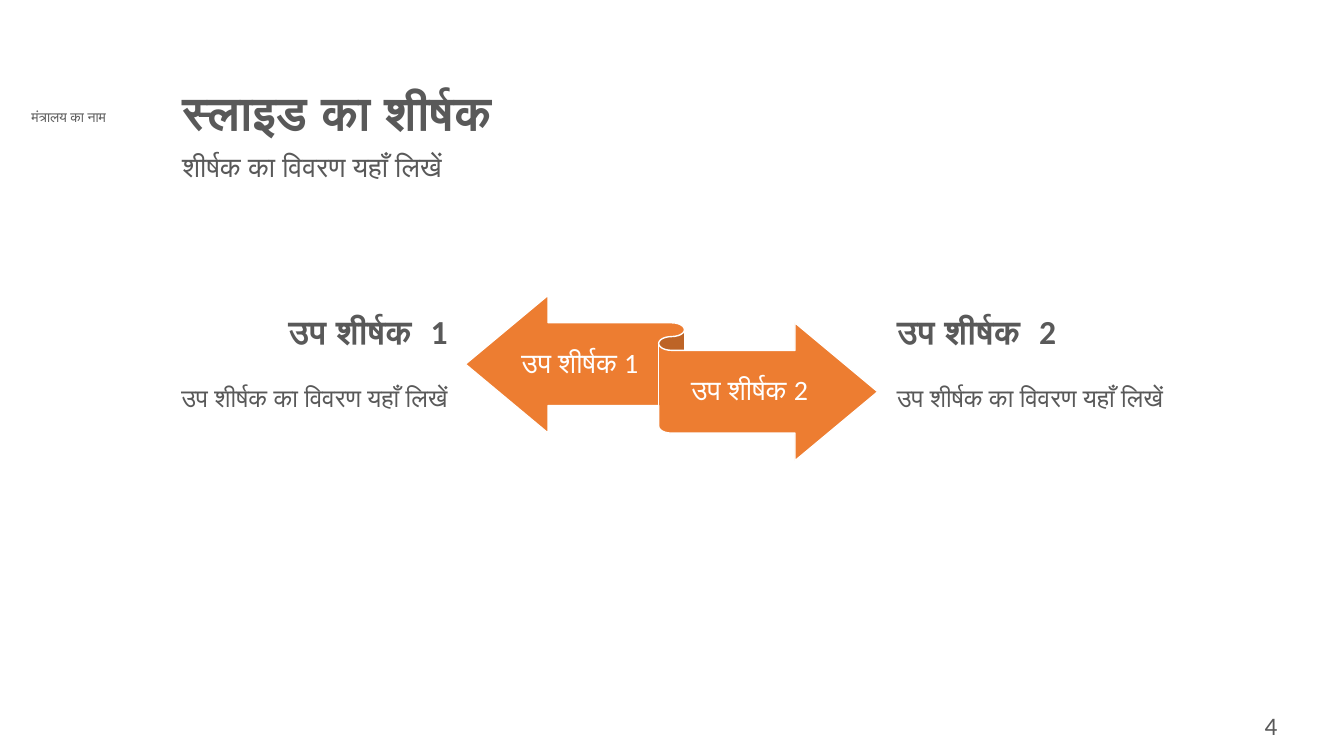
import pptx
import pptx.util
import pptx.dml.color
import pptx.enum.shapes
import pptx.enum.text

Cm = pptx.util.Cm
Pt = pptx.util.Pt
ALIGN = pptx.enum.text.PP_ALIGN
ANCHOR = pptx.enum.text.MSO_ANCHOR
GREY = pptx.dml.color.RGBColor(0x59, 0x59, 0x59)
ORANGE = pptx.dml.color.RGBColor(0xED, 0x7D, 0x31)
WHITE = pptx.dml.color.RGBColor(0xFF, 0xFF, 0xFF)


def add_box(s, left, top, width, height):
    sp = s.shapes.add_textbox(Cm(left), Cm(top), Cm(width), Cm(height))
    sp.text_frame.word_wrap = True
    return sp.text_frame


def write(p, text, size, color=GREY, bold=False, align=ALIGN.LEFT, font="Calibri"):
    p.alignment = align
    r = p.add_run()
    r.text = text
    r.font.name = font
    r.font.size = Pt(size)
    r.font.bold = bold
    r.font.color.rgb = color


prs = pptx.Presentation()
prs.slide_width = Cm(33.87)
prs.slide_height = Cm(19.05)
s = prs.slides.add_slide(prs.slide_layouts[5])

title = s.shapes.title
title.left, title.top, title.width, title.height = Cm(4.34), Cm(2.13), Cm(24.41), Cm(1.4)
tf = title.text_frame
tf.word_wrap = True
tf.auto_size = pptx.enum.text.MSO_AUTO_SIZE.NONE
tf.vertical_anchor = ANCHOR.TOP
tf.paragraphs[0].line_spacing = 0.9
write(tf.paragraphs[0], "स्लाइड का शीर्षक", 34, bold=True)

tf = add_box(s, 4.34, 3.73, 24.41, 1.6)
tf.paragraphs[0].line_spacing = 0.9
write(tf.paragraphs[0], "शीर्षक का विवरण यहाँ लिखें", 20)

tf = add_box(s, 0.08, 2.62, 3.3, 0.69)
write(tf.paragraphs[0], "मंत्रालय का नाम", 10, align=ALIGN.CENTER, font="Lato")

ribbon = s.shapes.add_shape(
    pptx.enum.shapes.MSO_SHAPE.LEFT_RIGHT_RIBBON, Cm(11.73), Cm(7.44), Cm(10.39), Cm(4.17))
ribbon.shadow.inherit = False
ribbon.fill.solid()
ribbon.fill.fore_color.rgb = ORANGE
ribbon.line.color.rgb = WHITE
ribbon.line.width = Pt(1)

for text, left, top, width in (("उप शीर्षक 1", 12.9, 8.18, 3.43),
                               ("उप शीर्षक 2", 16.86, 8.84, 4.06)):
    tf = add_box(s, left, top, width, 2.03)
    tf.margin_left = tf.margin_right = 0
    tf.margin_top = tf.margin_bottom = Cm(0.2)
    tf.vertical_anchor = ANCHOR.MIDDLE
    tf.paragraphs[0].line_spacing = 0.9
    write(tf.paragraphs[0], text, 20, WHITE, align=ALIGN.CENTER)

for heading, left, width, align in (("उप शीर्षक  1", 2.87, 8.66, ALIGN.RIGHT),
                                    ("उप शीर्षक  2", 22.35, 8.08, ALIGN.LEFT)):
    tf = add_box(s, left, 7.72, width, 2.82)
    write(tf.paragraphs[0], heading, 24, bold=True, align=align)
    p = tf.add_paragraph()
    p.space_before = Pt(22)
    write(p, "उप शीर्षक का विवरण यहाँ लिखें", 18, align=align)

tf = add_box(s, 30.53, 17.78, 3, 1.14)
write(tf.paragraphs[0], "4", 18, align=ALIGN.CENTER)

prs.save("out.pptx")
